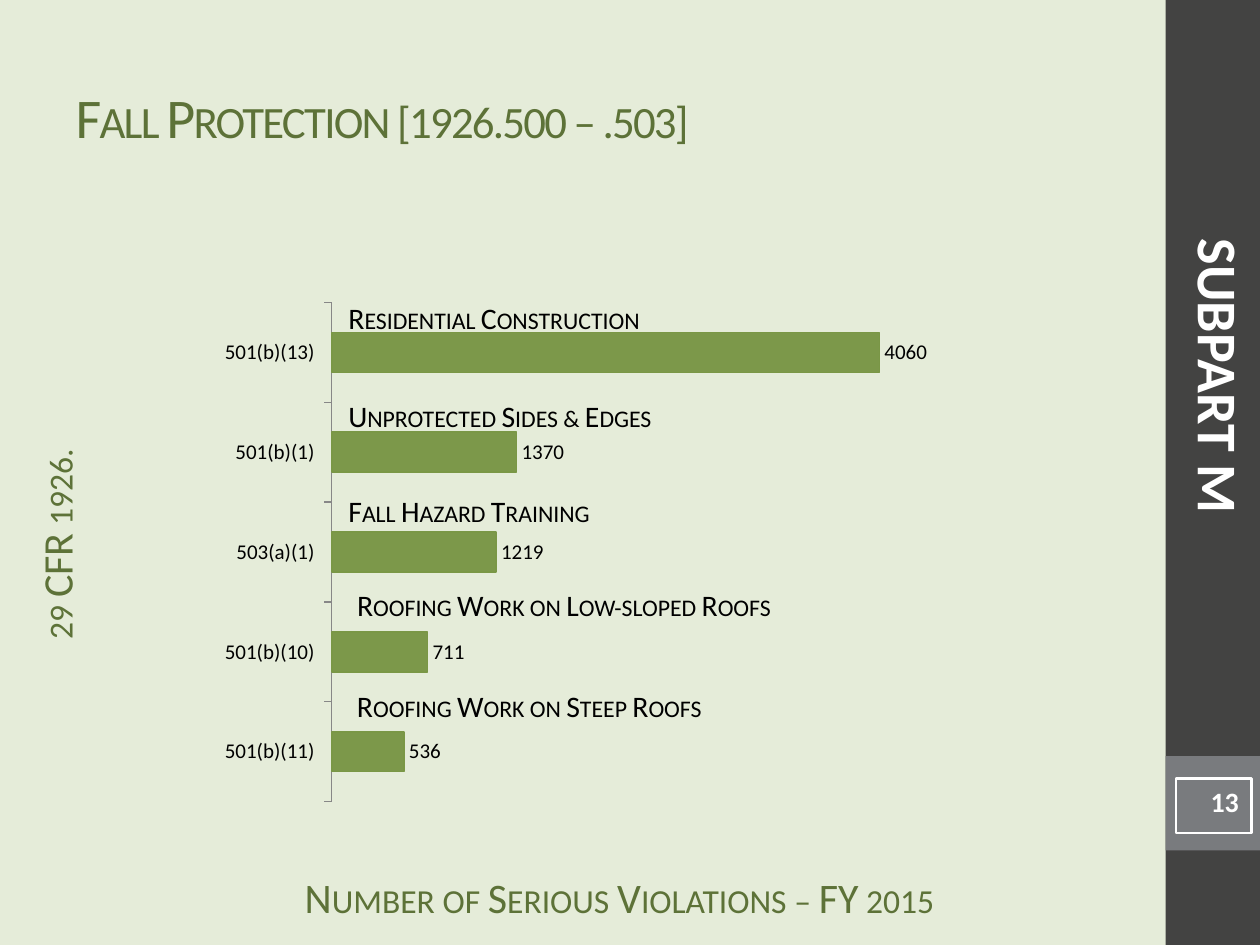
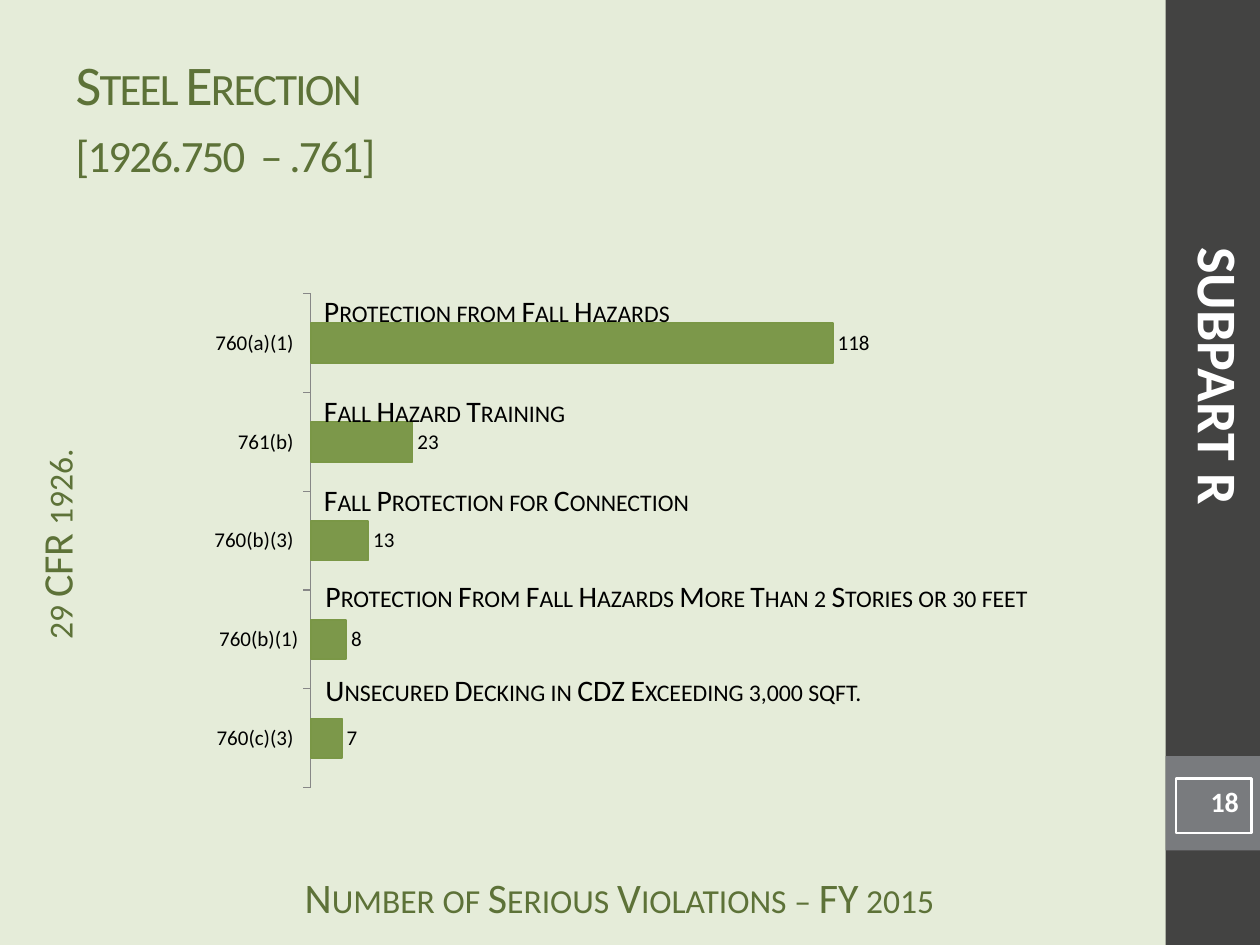
from pptx import Presentation
from pptx.chart.data import CategoryChartData
from pptx.dml.color import RGBColor
from pptx.enum.chart import XL_CHART_TYPE, XL_LABEL_POSITION, XL_TICK_MARK
from pptx.enum.shapes import MSO_SHAPE
from pptx.enum.text import MSO_ANCHOR, MSO_AUTO_SIZE, PP_ALIGN
from pptx.util import Pt

LEFT, MID, RIGHT = PP_ALIGN.LEFT, PP_ALIGN.CENTER, PP_ALIGN.RIGHT
GROW, FIXED = MSO_AUTO_SIZE.SHAPE_TO_FIT_TEXT, MSO_AUTO_SIZE.NONE
TOP, CENTRE = MSO_ANCHOR.TOP, MSO_ANCHOR.MIDDLE
RECT = MSO_SHAPE.RECTANGLE
BAR = XL_CHART_TYPE.BAR_CLUSTERED
OUT_END = XL_LABEL_POSITION.OUTSIDE_END
TICK, BARE = XL_TICK_MARK.OUTSIDE, XL_TICK_MARK.NONE

FONT = "Calibri"
HEX = {
    "page": "E5ECD9", "band": "434342", "block": "797B7E",
    "title": "5D7238", "text": "000000", "white": "FFFFFF",
    "bar": "7C984A", "edge": "7A9746", "axis": "878787",
}

TITLE_BOX = (36, 21.6, 600, 90)
BANDS = [("band", (666, 0, 54, 540)), ("block", (666, 432, 54, 54))]
LABELS = [
    ("Number of Serious Violations – FY 2015", (150, 498, 408, 24), 0),
    ("29 CFR 1926.", (-112.5, 290, 302, 42), 270),
]
PAGE_BOX = (672, 445, 43, 31)
PART_BOX = (481.7, 192, 430.6, 46)
LOOSE = 28

SLIDES = [
    {
        "title": ["Fall Protection [1926.500 – .503]"],
        "part": "SUBPART M", "page": "13",
        "chart": (120, 167, 425, 297), "max": 4500,
        "loose": 192, "tight": 204,
        "rows": [
            ("501(b)(13) ", 4060, "Residential Construction", 168, 184, LOOSE),
            ("501(b)(1) ", 1370, "Unprotected Sides & Edges", 224, 194, LOOSE),
            ("503(a)(1) ", 1219, "Fall Hazard Training", 278, 155, LOOSE),
            ("501(b)(10) ", 711, "Roofing Work on Low-sloped Roofs", 335.5, 258.5, 19),
            ("501(b)(11) ", 536, "Roofing Work on Steep Roofs", 393, 390, 21),
        ],
    },
    {
        "title": ["Steel Erection", "[1926.750  – .761]"],
        "part": "SUBPART R", "page": "18",
        "chart": (114, 162, 426, 294), "max": 140,
        "loose": 178, "tight": 186,
        "rows": [
            ("760(a)(1) ", 118, "Protection from Fall Hazards", 164, 217, LOOSE),
            ("761(b) ", 23, "Fall Hazard Training", 221, 155, LOOSE),
            ("760(b)(3) ", 13, "Fall Protection for Connection", 272, 230, LOOSE),
            ("760(b)(1)", 8,
             "Protection From Fall Hazards More Than 2 Stories or 30 feet", 330, 426, 21),
            ("760(c)(3) ", 7, "Unsecured Decking in CDZ Exceeding 3,000 sqft.", 384, 354, 30),
        ],
    },
]


def rgb(name):
    return RGBColor.from_string(HEX[name])


def points(box):
    return [Pt(n) for n in box]


def style(font, size, hue, bold=False):
    font.name, font.size, font.bold = FONT, Pt(size), bold
    font.color.rgb = rgb(hue)


def write(para, text, size, hue, bold=False, small=False):
    run = para.add_run()
    run.text = text
    style(run.font, size, hue, bold)
    if small:
        run.font._element.set("cap", "small")
    return run


def add_text(slide, box, text, size, hue, align=LEFT, inset=None, turn=0,
             wrap=True, fit=FIXED, bold=False, small=True):
    shape = slide.shapes.add_textbox(*points(box))
    shape.rotation = turn
    frame = shape.text_frame
    frame.word_wrap, frame.auto_size = wrap, fit
    if inset:
        (frame.margin_left, frame.margin_top,
         frame.margin_right, frame.margin_bottom) = points(inset)
    para = frame.paragraphs[0]
    para.alignment = align
    write(para, text, size, hue, bold, small)


def add_rect(slide, box, fill=None):
    shape = slide.shapes.add_shape(RECT, *points(box))
    shape.shadow.inherit = False
    shape.line.fill.background()
    if fill:
        shape.fill.solid()
        shape.fill.fore_color.rgb = rgb(fill)
    else:
        shape.fill.background()
    return shape


def add_frame(slide):
    for hue, box in BANDS:
        add_rect(slide, box, hue)
    for text, box, turn in LABELS:
        add_text(slide, box, text, 24, "title", MID, (7.2, 0, 7.2, 3.6), turn)


def set_title(slide, lines):
    title = slide.shapes.title
    title.left, title.top, title.width, title.height = points(TITLE_BOX)
    frame = title.text_frame
    frame.auto_size, frame.vertical_anchor = FIXED, CENTRE
    para = frame.paragraphs[0]
    para.alignment = LEFT
    for i, line in enumerate(lines):
        if i:
            para.add_line_break()
        run = write(para, line, 32, "title", small=True)
        run.font._element.set("spc", "-100")


def add_bars(slide, item):
    rows = item["rows"][::-1]
    data = CategoryChartData()
    data.categories = [row[0] for row in rows]
    data.add_series("Series 1", [row[1] for row in rows])
    chart = slide.shapes.add_chart(BAR, *points(item["chart"]), data).chart
    chart.has_legend = chart.has_title = False
    style(chart.font, 10, "text")

    axis = chart.category_axis
    axis.major_tick_mark, axis.minor_tick_mark = TICK, BARE
    axis.has_major_gridlines = False
    axis.format.line.color.rgb = rgb("axis")
    style(axis.tick_labels.font, 12, "text")

    scale = chart.value_axis
    scale.has_major_gridlines = scale.visible = False
    scale.minimum_scale, scale.maximum_scale = 0, item["max"]

    plot = chart.plots[0]
    plot.gap_width, plot.vary_by_categories = 150, False
    bars = plot.series[0]
    bars.format.fill.solid()
    bars.format.fill.fore_color.rgb = rgb("bar")
    bars.format.line.color.rgb = rgb("edge")
    bars.format.line.width = Pt(1)
    labels = bars.data_labels
    labels.show_value, labels.position = True, OUT_END
    style(labels.font, 12, "text")


def add_notes(slide, item):
    for _, _, text, top, width, height in item["rows"]:
        if height == LOOSE:
            left, extra = item["loose"], {"wrap": False, "fit": GROW}
        else:
            left, extra = item["tight"], {"inset": (0, 0, 0, 0)}
        add_text(slide, (left, top, width, height), text, 17, "text", **extra)


def add_page(slide, text):
    shape = add_rect(slide, PAGE_BOX)
    shape.line.color.rgb = rgb("white")
    shape.line.width = Pt(1.5)
    frame = shape.text_frame
    frame.vertical_anchor = TOP
    para = frame.paragraphs[0]
    para.alignment = RIGHT
    write(para, text, 16, "white", bold=True)


def main():
    deck = Presentation()
    deck.slide_width, deck.slide_height = Pt(720), Pt(540)
    back = deck.slide_master.background.fill
    back.solid()
    back.fore_color.rgb = rgb("page")
    for item in SLIDES:
        slide = deck.slides.add_slide(deck.slide_layouts[5])
        add_frame(slide)
        add_bars(slide, item)
        set_title(slide, item["title"])
        add_page(slide, item["page"])
        add_notes(slide, item)
        add_text(slide, PART_BOX, item["part"], 32, "white", MID, turn=90,
                 fit=GROW, bold=True, small=False)
    deck.save("out.pptx")


if __name__ == "__main__":
    main()
